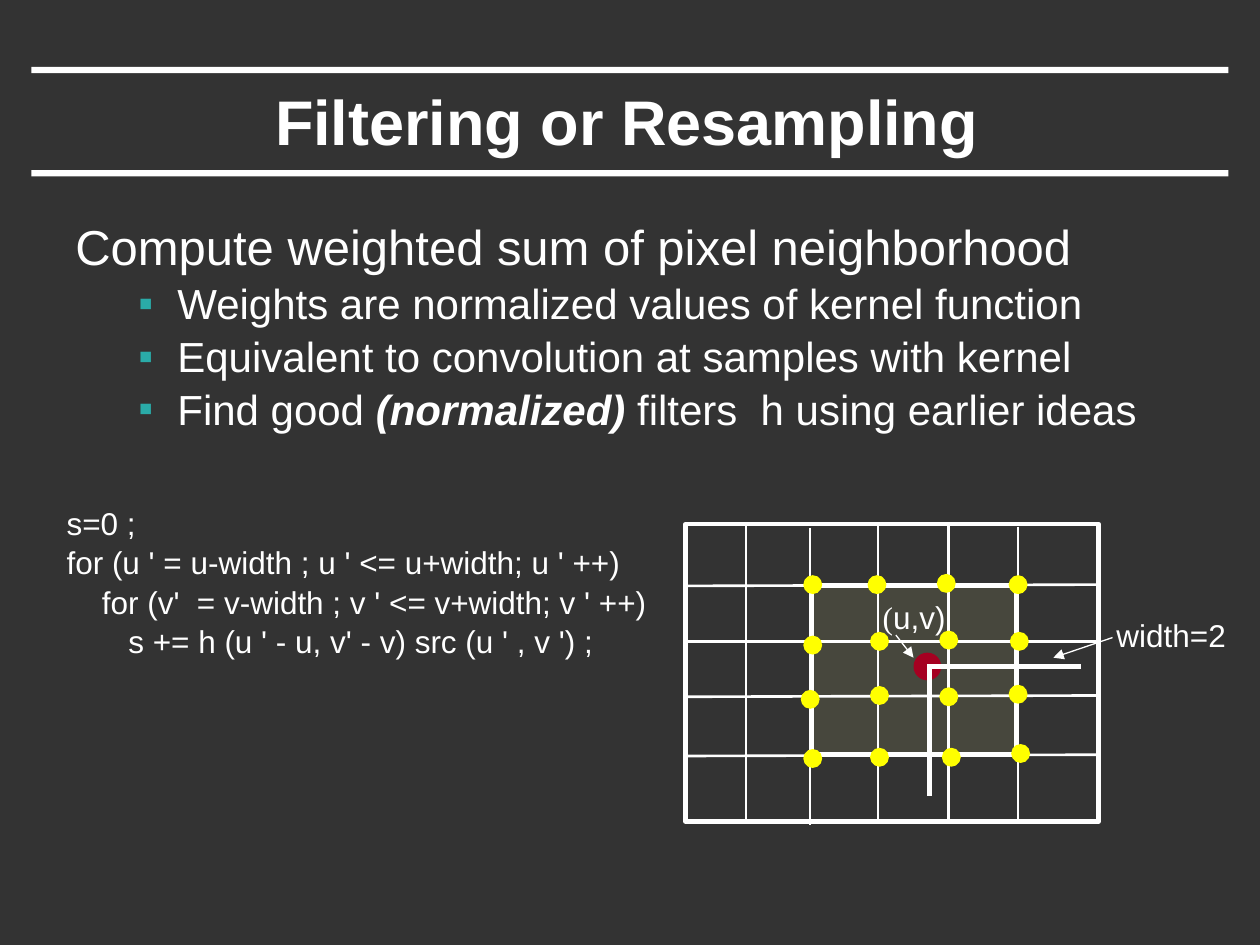
"""Build a slide on filtering by a weighted sum of neighbouring pixels."""
from lxml.etree import SubElement
from pptx import Presentation
from pptx.dml.color import RGBColor
from pptx.enum.shapes import MSO_CONNECTOR, MSO_SHAPE
from pptx.enum.text import MSO_ANCHOR, PP_ALIGN
from pptx.oxml.ns import qn
from pptx.util import Inches, Pt

WHITE, DARK, TEAL = "FFFFFF", "333333", "2AABA8"
RED, YELLOW, CREAM = "A50021", "FFFF00", "FFFF99"

TITLE = "Filtering or Resampling"
LEAD = "Compute weighted sum of pixel neighborhood"
POINTS = [
    ["Weights are normalized values of kernel function"],
    ["Equivalent to convolution at samples with kernel"],
    ["Find good ", ("(normalized)", {"bold": True, "italic": True}),
     " filters  h using earlier ideas"],
]
CODE = [
    (0, "s=0 ;"),
    (0, "for (u ' = u-width ; u ' <= u+width; u ' ++)"),
    (0.28, "for (v'  = v-width ; v ' <= v+width; v ' ++)"),
    (0.49, "s += h (u ' - u, v' - v) src (u ' , v ') ;"),
]
LABELS = [
    ((6.9, 4.7, 0.71, 0.4), [("(", {"name": "Times New Roman"}), "u,v)"]),
    ((8.75, 4.84, 1.09, 0.4), ["width=2"]),
]

BARS = [0.53, 1.35]
GRID = (5.44, 4.16, 3.28, 2.36)
COLS = [(5.92, 4.17), (6.43, 4.19), (6.97, 4.15), (7.53, 4.15), (8.08, 4.18)]
ROWS = [(4.65, 4.64), (5.09, 5.09), (5.53, 5.52), (6, 5.99)]
DOTS = [
    [(6.45, 4.64), (6.96, 4.64), (7.51, 4.63), (8.08, 4.64)],
    [(6.45, 5.12), (6.98, 5.09), (7.53, 5.08), (8.09, 5.09)],
    [(6.43, 5.55), (6.98, 5.52), (7.53, 5.53), (8.08, 5.51)],
    [(6.45, 6.02), (6.98, 6.01), (7.55, 6.01), (8.1, 5.98)],
]
WIDTHS = [(7.36, 5.29, 8.58, 5.29), (7.38, 5.29, 7.38, 6.32)]
ARROWS = [(7.11, 5.04, 7.25, 5.22), (8.83, 5.06, 8.36, 5.22)]


def color(text):
    return RGBColor.from_string(text)


def write(para, runs, size=18, name="Arial", bold=False, italic=False,
          align=PP_ALIGN.LEFT, before=0, left=0, hang=0, bullet=None):
    para.alignment, para.space_before = align, Pt(before)
    props = para._p.get_or_add_pPr()
    props.set("marL", str(Inches(left)))
    props.set("indent", str(Inches(-hang)))
    if bullet:
        tint = SubElement(props, qn("a:buClr"))
        SubElement(tint, qn("a:srgbClr"), val=TEAL)
        SubElement(props, qn("a:buFont"), typeface="Arial")
        SubElement(props, qn("a:buChar"), char=bullet)
    base = {"name": name, "bold": bold, "italic": italic}
    for part in runs:
        text, style = (part, {}) if isinstance(part, str) else part
        run = para.add_run()
        run.text = text
        font = run.font
        font.size, font.color.rgb = Pt(size), color(WHITE)
        for key, value in {**base, **style}.items():
            setattr(font, key, value)


def frame(slide, box, wrap=True):
    text = slide.shapes.add_textbox(*map(Inches, box)).text_frame
    text.word_wrap = wrap
    return text


def grow(text):
    first = text.paragraphs[0]
    return text.add_paragraph() if first.runs else first


def shape(slide, kind, box, fill=None, line=0, alpha=None):
    item = slide.shapes.add_shape(kind, *map(Inches, box))
    item.shadow.inherit = False
    if fill:
        item.fill.solid()
        item.fill.fore_color.rgb = color(fill)
    else:
        item.fill.background()
    if alpha:
        tint = item.fill._xPr.find(".//" + qn("a:srgbClr"))
        SubElement(tint, qn("a:alpha"), val=str(alpha * 1000))
    if line:
        item.line.color.rgb, item.line.width = color(WHITE), Pt(line)
    else:
        item.line.fill.background()


def disc(slide, x, y, size, fill):
    box = (x - size / 2, y - size / 2, size, size)
    shape(slide, MSO_SHAPE.OVAL, box, fill)


def line(slide, ends, width, arrow=False):
    item = slide.shapes.add_connector(
        MSO_CONNECTOR.STRAIGHT, *map(Inches, ends))
    item.line.color.rgb, item.line.width = color(WHITE), Pt(width)
    if arrow:
        SubElement(item.line._get_or_add_ln(), qn("a:tailEnd"),
                   type="triangle")
    SubElement(item._element.spPr, qn("a:effectLst"))


def draw_text(slide):
    title = slide.shapes.title
    title.left, title.top, title.width, title.height = map(
        Inches, (0.74, 0.58, 8.47, 0.75))
    title.text_frame.vertical_anchor = MSO_ANCHOR.MIDDLE
    write(title.text_frame.paragraphs[0], [TITLE], size=36, bold=True,
          align=PP_ALIGN.CENTER)
    body = frame(slide, (0.5, 1.67, 9, 2))
    write(grow(body), [LEAD], size=28, before=3)
    for runs in POINTS:
        write(grow(body), runs, size=24, before=1.3, left=0.81, hang=0.31,
              bullet="▪")
    code = frame(slide, (0.43, 3.95, 4.85, 1.92), wrap=False)
    for left, text in CODE:
        write(grow(code), [text], before=0.9, left=left)


def draw_grid(slide):
    shape(slide, MSO_SHAPE.RECTANGLE, (6.44, 4.65, 1.63, 1.34), CREAM,
          line=3, alpha=10)
    shape(slide, MSO_SHAPE.RECTANGLE, GRID, line=2.5)
    left, _, wide, high = GRID
    for x, top in COLS:
        line(slide, (x, top, x, top + high), 1.5)
    for start, end in ROWS:
        line(slide, (left, start, left + wide, end), 1.5)
    disc(slide, 7.36, 5.29, 0.22, RED)
    for row in DOTS:
        for x, y in row:
            disc(slide, x, y, 0.15, YELLOW)
    for box, runs in LABELS:
        write(grow(frame(slide, box, wrap=False)), runs,
              align=PP_ALIGN.CENTER)
    for ends in WIDTHS:
        line(slide, ends, 3)
    for ends in ARROWS:
        line(slide, ends, 0.75, arrow=True)


def main():
    deck = Presentation()
    deck.slide_width, deck.slide_height = Inches(10), Inches(7.5)
    slide = deck.slides.add_slide(deck.slide_layouts[5])
    slide.background.fill.solid()
    slide.background.fill.fore_color.rgb = color(DARK)
    for top in BARS:
        shape(slide, MSO_SHAPE.RECTANGLE, (0.25, top, 9.5, 0.05), WHITE)
    draw_text(slide)
    draw_grid(slide)
    deck.save("out.pptx")


if __name__ == "__main__":
    main()
